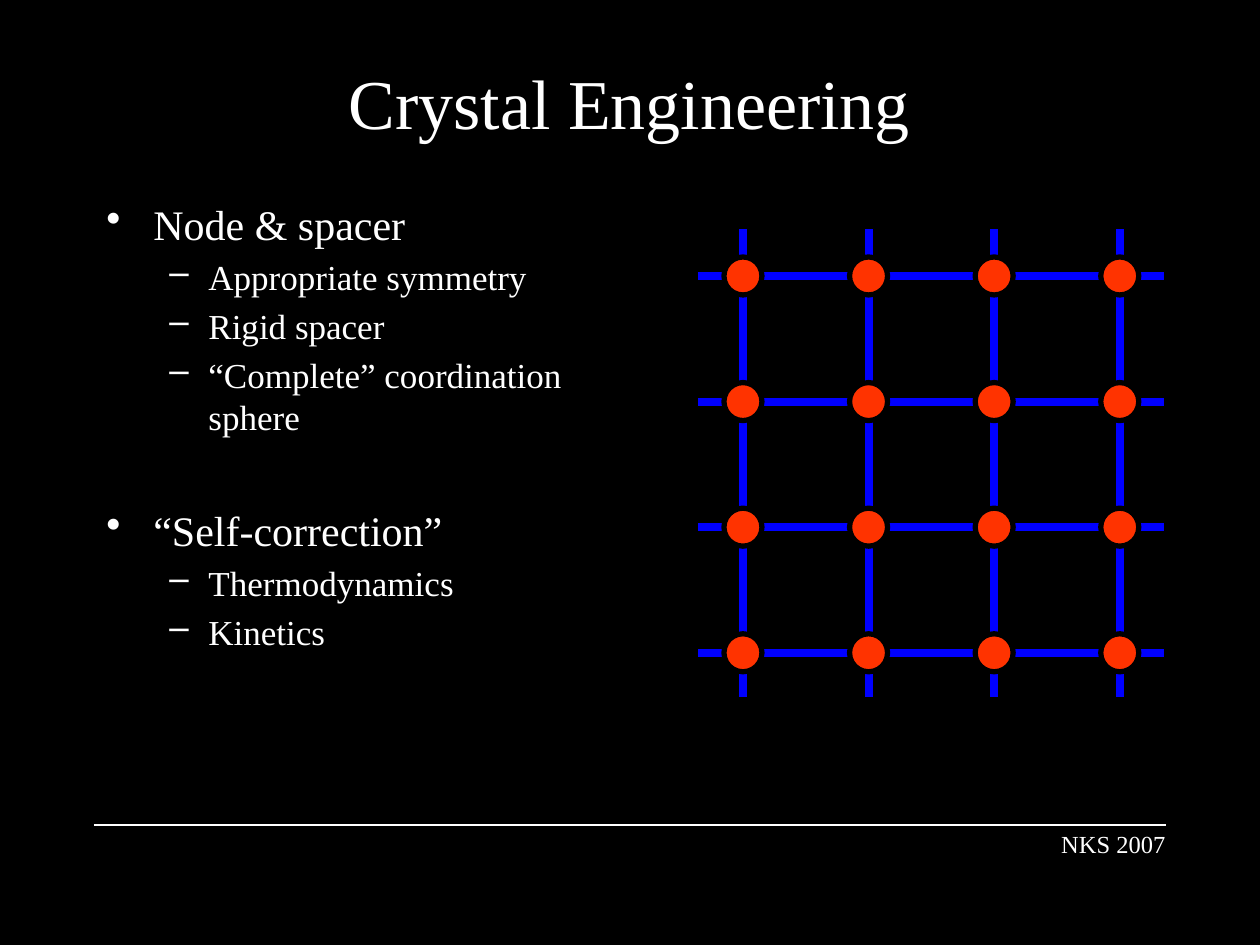
from pptx import Presentation, util as u
from pptx.dml.color import RGBColor
from pptx.enum import shapes, text
from pptx.oxml.xmlchemy import OxmlElement

HUES = {"back": "000000", "ink": "FFFFFF", "spacer": "0000FF", "node": "FF3300"}
FONT = "Times New Roman"
TITLE = "Crystal Engineering"
TOPICS = [
    ("Node & spacer",
     ["Appropriate symmetry", "Rigid spacer", "“Complete” coordination sphere"]),
    ("“Self-correction”", ["Thermodynamics", "Kinetics"]),
]
FOOTER = "NKS 2007"
LEVELS = [
    {"size": 24, "mark": "•", "left": 47, "hang": 47},
    {"size": 20, "mark": "–", "left": 102, "hang": 39},
]
TOPIC_GAP = 38
COUNT, PITCH, DOT = 4, 125.6, 38
FIRST_X, FIRST_Y = 743, 276
LEFT, RIGHT, TOP, BOTTOM = 698, 1164, 229, 697


def px(n):
    return round(n * 914400 / 126)


def hue(name):
    return RGBColor.from_string(HUES[name])


deck = Presentation()
deck.slide_width, deck.slide_height = px(1260), px(945)
slide = deck.slides.add_slide(deck.slide_layouts[6])
slide.background.fill.solid()
slide.background.fill.fore_color.rgb = hue("back")


def add_box(x, y, w, h, anchor=text.MSO_ANCHOR.TOP):
    frame = slide.shapes.add_textbox(px(x), px(y), px(w), px(h)).text_frame
    frame.word_wrap = True
    frame.vertical_anchor = anchor
    return frame


def write(frame, words, size, align=text.PP_ALIGN.LEFT, mark=None,
          left=0, hang=0, before=0, level=0):
    para = frame.paragraphs[0] if not frame.text else frame.add_paragraph()
    if mark:
        props = para._p.get_or_add_pPr()
        props.set("marL", str(px(left)))
        props.set("indent", str(-px(hang)))
        bullet = OxmlElement("a:buChar")
        bullet.set("char", mark)
        props.append(bullet)
    para.level = level
    para.alignment = align
    para.space_before = u.Pt(before)
    run = para.add_run()
    run.text = words
    run.font.name, run.font.size = FONT, u.Pt(size)
    run.font.color.rgb = hue("ink")


def add_line(x1, y1, x2, y2, color, width):
    line = slide.shapes.add_connector(
        shapes.MSO_CONNECTOR.STRAIGHT, px(x1), px(y1), px(x2), px(y2))
    line.line.color.rgb = hue(color)
    line.line.width = u.Pt(width)
    line._element.spPr.append(OxmlElement("a:effectLst"))


def add_node(x, y):
    node = slide.shapes.add_shape(
        shapes.MSO_SHAPE.OVAL, px(x - DOT / 2), px(y - DOT / 2), px(DOT), px(DOT))
    node.shadow.inherit = False
    node.fill.solid()
    node.fill.fore_color.rgb = hue("node")
    node.line.color.rgb = hue("back")
    node.line.width = u.Pt(3)


add_line(94, 825, 1166, 825, "ink", 0.75)
write(add_box(94, 23, 1071, 157, text.MSO_ANCHOR.MIDDLE), TITLE, 40,
      align=text.PP_ALIGN.CENTER)

body = add_box(94, 192, 525, 549)
for i, (topic, points) in enumerate(TOPICS):
    write(body, topic, before=TOPIC_GAP if i else 0, **LEVELS[0])
    for point in points:
        write(body, point, before=4, level=1, **LEVELS[1])

cols = [FIRST_X + i * PITCH for i in range(COUNT)]
rows = [FIRST_Y + i * PITCH for i in range(COUNT)]
for x in cols:
    add_line(x, BOTTOM, x, TOP, "spacer", 4.5)
for y in rows:
    add_line(LEFT, y, RIGHT, y, "spacer", 4.5)
for y in rows:
    for x in cols:
        add_node(x, y)

write(add_box(374, 823, 804, 81), FOOTER, 14, align=text.PP_ALIGN.RIGHT)
deck.save("out.pptx")
